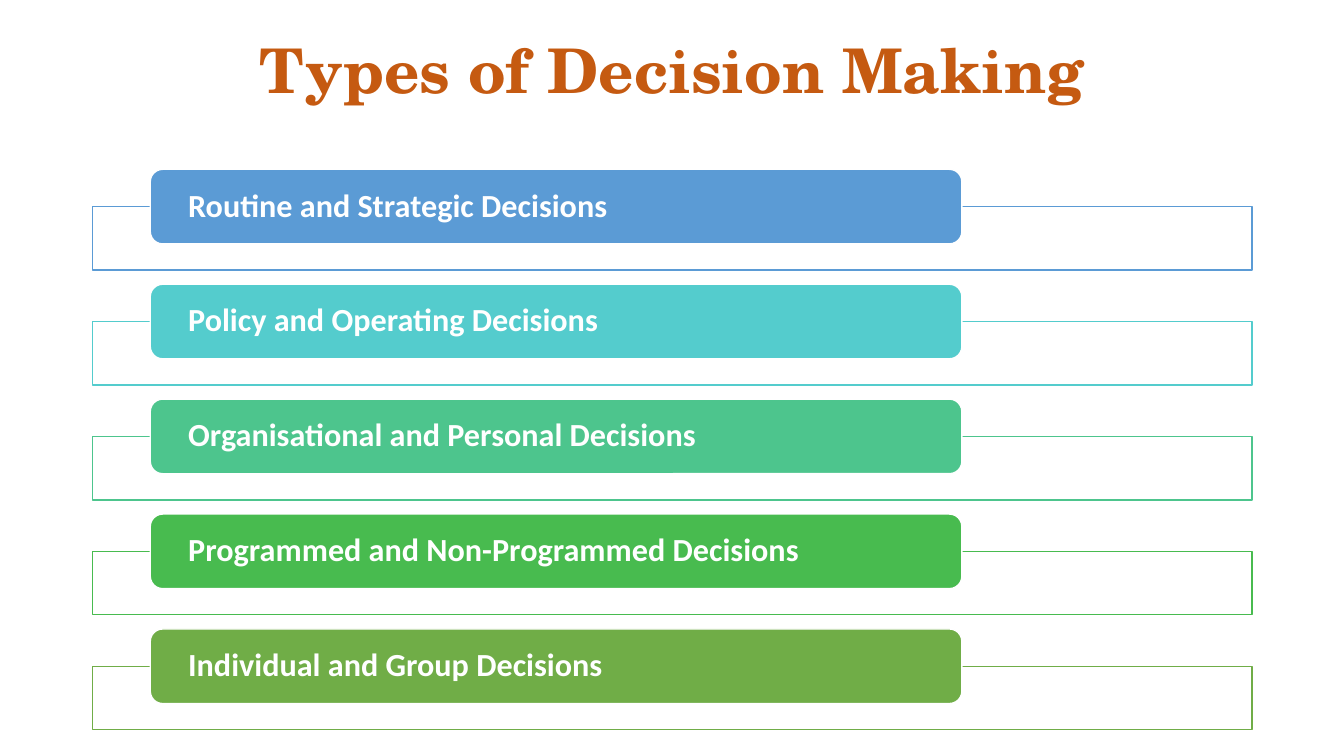
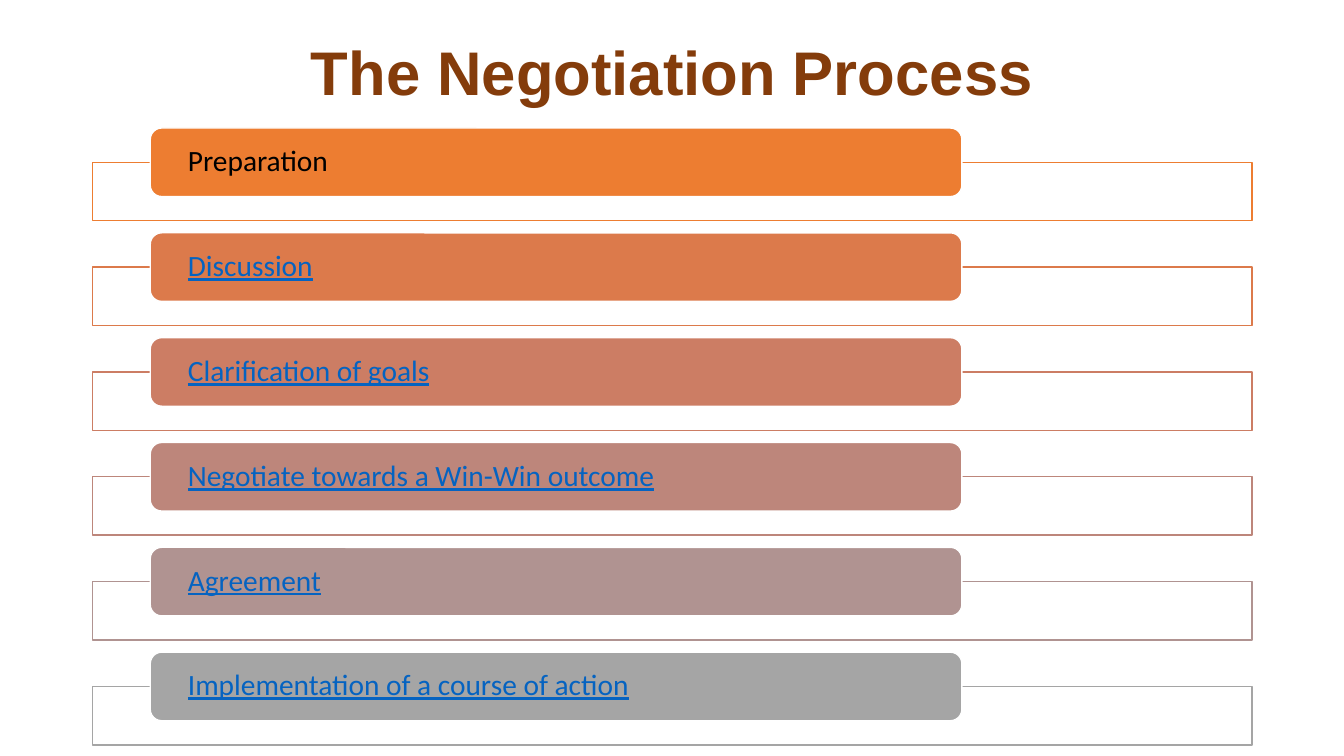
import pptx
import pptx.util
import pptx.dml.color
import pptx.enum.shapes
import pptx.enum.text
import pptx.oxml.ns
import lxml.etree

Inches, Pt = pptx.util.Inches, pptx.util.Pt

COLORS = {
    "white": "FFFFFF", "black": "000000", "link": "0563C1",
    "rust": "C55A11", "brown": "843C0B",
    "blue": "5B9BD5", "aqua": "54CCCD", "mint": "4DC58D",
    "green": "48BB4F", "olive": "70AD47",
    "orange": "ED7D31", "copper": "DC7A4B", "coral": "CC7D64",
    "rose": "BD867B", "mauve": "B09391", "gray": "A5A5A5",
}

SLIDES = [
    {
        "title": "Types of Decision Making",
        "title_font": "TeX Gyre Schola", "title_color": "rust", "title_top": 0,
        "top": 1.68, "pitch": 1.14, "tab_height": 0.74, "frame_height": 0.63,
        "size": 23, "bold": True,
        "items": [
            ("Routine and Strategic Decisions", "blue", "white"),
            ("Policy and Operating Decisions", "aqua", "white"),
            ("Organisational and Personal Decisions", "mint", "white"),
            ("Programmed and Non-Programmed Decisions", "green", "white"),
            ("Individual and Group Decisions", "olive", "white"),
        ],
    },
    {
        "title": "The Negotiation Process",
        "title_font": "Arial", "title_color": "brown", "title_top": 0.02,
        "top": 1.27, "pitch": 1.04, "tab_height": 0.68, "frame_height": 0.58,
        "size": 21, "bold": False,
        "items": [
            ("Preparation", "orange", "black"),
            ("Discussion", "copper", "link"),
            ("Clarification of goals", "coral", "link"),
            ("Negotiate towards a Win-Win outcome", "rose", "link"),
            ("Agreement", "mauve", "link"),
            ("Implementation of a course of action", "gray", "link"),
        ],
    },
]

LEFT, WIDTH = 0.92, 11.5
TAB_LEFT, TAB_WIDTH, TAB_INSET = 1.49, 8.05, 0.34


def rgb(name):
    return pptx.dml.color.RGBColor.from_string(COLORS[name])


def add_box(s, kind, box, fill, line):
    sp = s.shapes.add_shape(kind, *map(Inches, box))
    sp.shadow.inherit = False
    sp.fill.solid()
    sp.fill.fore_color.rgb = rgb(fill)
    sp.line.color.rgb = rgb(line)
    sp.line.width = Pt(1)
    return sp


def set_alpha(sp, percent):
    qn = pptx.oxml.ns.qn
    color = sp.fill._xPr.find(qn("a:solidFill")).find(qn("a:srgbClr"))
    lxml.etree.SubElement(color, qn("a:alpha")).set("val", str(percent * 1000))


def write(sp, text, font, size, color, bold, align, underline=False):
    tf = sp.text_frame
    tf.word_wrap = True
    tf.vertical_anchor = pptx.enum.text.MSO_ANCHOR.MIDDLE
    p = tf.paragraphs[0]
    p.alignment = align
    p.line_spacing = 0.9
    r = p.add_run()
    r.text = text
    r.font.name = font
    r.font.size = Pt(size)
    r.font.bold = bold
    r.font.underline = underline
    r.font.color.rgb = rgb(color)


def add_title(s, data):
    box = (LEFT, data["title_top"], WIDTH, 1.45)
    sp = s.shapes.add_textbox(*map(Inches, box))
    write(sp, data["title"], data["title_font"], 44, data["title_color"], True,
          pptx.enum.text.PP_ALIGN.CENTER)


def add_items(s, data):
    shapes = pptx.enum.shapes.MSO_SHAPE
    height = data["tab_height"]
    for i, (text, color, text_color) in enumerate(data["items"]):
        top = data["top"] + i * data["pitch"]
        frame = add_box(s, shapes.RECTANGLE,
                        (LEFT, top + height / 2, WIDTH, data["frame_height"]),
                        "white", color)
        set_alpha(frame, 90)
        tab = add_box(s, shapes.ROUNDED_RECTANGLE,
                      (TAB_LEFT, top, TAB_WIDTH, height), color, "white")
        tf = tab.text_frame
        tf.margin_left = tf.margin_right = Inches(TAB_INSET)
        tf.margin_top = tf.margin_bottom = 0
        write(tab, text, "Calibri", data["size"], text_color, data["bold"],
              pptx.enum.text.PP_ALIGN.LEFT, text_color == "link")


def main():
    prs = pptx.Presentation()
    prs.slide_width, prs.slide_height = Inches(13.33), Inches(7.5)
    for data in SLIDES:
        s = prs.slides.add_slide(prs.slide_layouts[6])
        add_title(s, data)
        add_items(s, data)
    prs.save("out.pptx")


if __name__ == "__main__":
    main()
